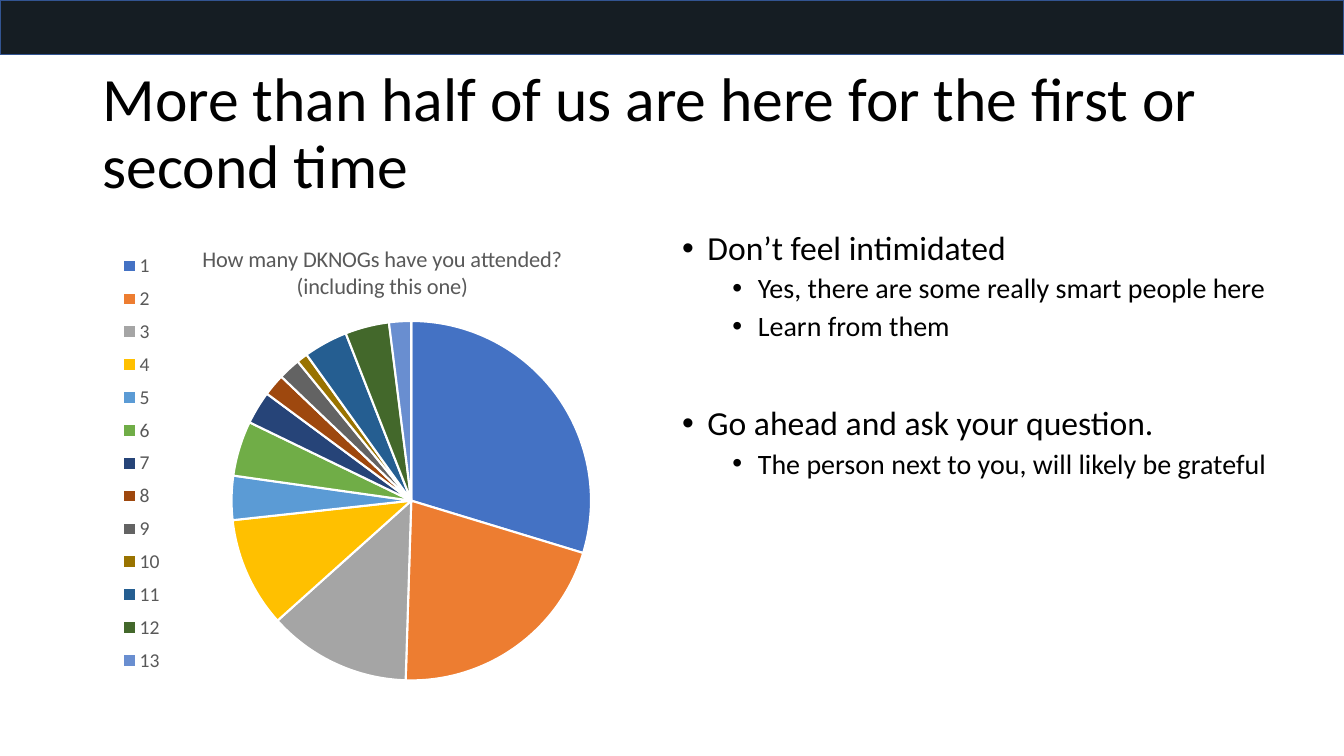
from dataclasses import dataclass

from lxml.etree import SubElement
from pptx import Presentation
from pptx.chart.data import CategoryChartData
from pptx.dml.color import RGBColor
from pptx.enum.chart import XL_CHART_TYPE as ChartType, XL_LEGEND_POSITION as LegendPos
from pptx.enum.shapes import MSO_SHAPE as Shape
from pptx.enum.text import MSO_ANCHOR as Anchor, MSO_AUTO_SIZE as AutoSize, PP_ALIGN as Align
from pptx.oxml import parse_xml
from pptx.oxml.ns import nsdecls, qn
from pptx.util import Cm, Pt

FONT = "Calibri"
GREY = "595959"
BLACK = "000000"


@dataclass
class Slice:
    attended: str
    share: int
    colour: str


@dataclass
class Bullet:
    text: str
    level: int = 0
    before: float = 5


SLICES = [
    Slice("1", 30, "4472C4"), Slice("2", 21, "ED7D31"), Slice("3", 13, "A5A5A5"),
    Slice("4", 10, "FFC000"), Slice("5", 4, "5B9BD5"), Slice("6", 5, "70AD47"),
    Slice("7", 3, "264478"), Slice("8", 2, "9E480E"), Slice("9", 2, "636363"),
    Slice("10", 1, "997300"), Slice("11", 4, "255E91"), Slice("12", 4, "43682B"),
    Slice("13", 2, "698ED0"),
]
BULLETS = [
    Bullet("Don’t feel intimidated", before=0),
    Bullet("Yes, there are some really smart people here", 1),
    Bullet("Learn from them", 1),
    Bullet("Go ahead and ask your question.", before=46),
    Bullet("The person next to you, will likely be grateful", 1),
]


def rgb(colour: str) -> RGBColor:
    return RGBColor.from_string(colour)


def set_font(font, size: float, colour: str) -> None:
    font.name, font.size, font.bold = FONT, Pt(size), False
    font.color.rgb = rgb(colour)


def set_layout(parent, index: int, target: str, x: float, y: float, w: float, h: float) -> None:
    """Place a chart part by fractions of the chart's size."""
    for old in parent.findall(qn("c:layout")):
        parent.remove(old)
    inner = f'<c:layoutTarget val="{target}"/>' if target else ""
    parent.insert(index, parse_xml(
        f'<c:layout {nsdecls("c")}><c:manualLayout>{inner}'
        '<c:xMode val="edge"/><c:yMode val="edge"/>'
        f'<c:x val="{x}"/><c:y val="{y}"/><c:w val="{w}"/><c:h val="{h}"/>'
        '</c:manualLayout></c:layout>'))


def add_header_bar(s, width: int) -> None:
    bar = s.shapes.add_shape(Shape.RECTANGLE, 0, 0, width, Cm(1.37))
    bar.shadow.inherit = False
    bar.fill.solid()
    bar.fill.fore_color.rgb = rgb("151D23")
    bar.line.color.rgb = rgb("325491")
    bar.line.width = Pt(1)


def set_title(s, text: str) -> None:
    title = s.shapes.title
    title.left, title.top, title.width, title.height = Cm(2.33), Cm(1.52), Cm(29.21), Cm(3.76)
    tf = title.text_frame
    tf.text = text
    tf.word_wrap = True
    tf.auto_size = AutoSize.NONE
    tf.vertical_anchor = Anchor.MIDDLE
    p = tf.paragraphs[0]
    p.alignment = Align.LEFT
    p.line_spacing = 0.9
    set_font(p.runs[0].font, 44, BLACK)


def add_attendance_pie(s) -> None:
    data = CategoryChartData()
    data.categories = [item.attended for item in SLICES]
    data.add_series("Series 1", [item.share for item in SLICES])
    chart = s.shapes.add_chart(
        ChartType.PIE, Cm(2.33), Cm(5.71), Cm(14.61), Cm(11.81), data).chart
    set_font(chart.font, 10, BLACK)

    chart.has_title = True
    tf = chart.chart_title.text_frame
    tf.text = "How many DKNOGs have you attended?\n(including this one)"
    for p in tf.paragraphs:
        set_font(p.runs[0].font, 16, GREY)

    chart.has_legend = True
    legend = chart.legend
    legend.position = LegendPos.LEFT
    legend.include_in_layout = False
    set_font(legend.font, 14, GREY)

    plot = chart.plots[0]
    plot.vary_by_categories = True
    for i, item in enumerate(SLICES):
        fmt = plot.series[0].points[i].format
        fmt.fill.solid()
        fmt.fill.fore_color.rgb = rgb(item.colour)
        fmt.line.color.rgb = rgb("FFFFFF")
        fmt.line.width = Pt(1.5)

    root = chart.element
    set_layout(root.find(".//" + qn("c:plotArea")), 0, "inner", 0.24, 0.2, 0.62, 0.77)
    set_layout(root.find(".//" + qn("c:legend")), 1, "", 0.04, 0.04, 0.09, 0.93)


def add_advice(s) -> None:
    tf = s.shapes.add_textbox(Cm(16.94), Cm(5.71), Cm(15.65), Cm(9.47)).text_frame
    tf.word_wrap = True
    for i, bullet in enumerate(BULLETS):
        p = tf.paragraphs[0] if i == 0 else tf.add_paragraph()
        p.text = bullet.text
        p.level = bullet.level
        p.line_spacing = 0.9
        p.space_before = Pt(bullet.before)
        pPr = p._p.get_or_add_pPr()
        pPr.set("marL", str(Cm(0.64 + 1.27 * bullet.level)))
        pPr.set("indent", str(Cm(-0.64)))
        SubElement(pPr, qn("a:buFont"), typeface="Arial")
        SubElement(pPr, qn("a:buChar"), char="•")
        set_font(p.runs[0].font, 24 - 4 * bullet.level, BLACK)


def main() -> None:
    prs = Presentation()
    prs.slide_width, prs.slide_height = Cm(33.87), Cm(19.05)
    s = prs.slides.add_slide(prs.slide_layouts[5])
    add_header_bar(s, prs.slide_width)
    set_title(s, "More than half of us are here for the first or second time")
    add_attendance_pie(s)
    add_advice(s)
    prs.save("out.pptx")


if __name__ == "__main__":
    main()
